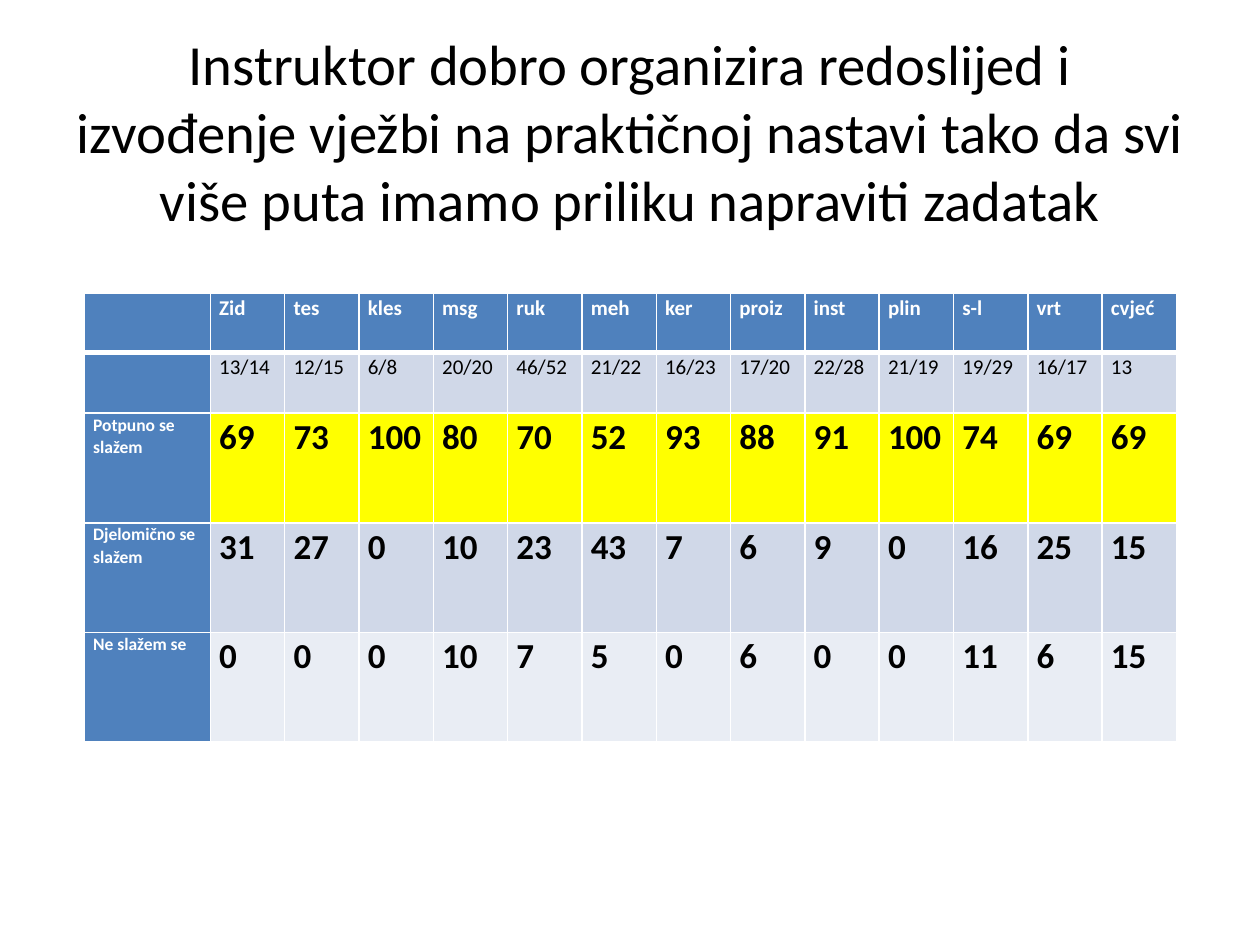
from lxml import etree
from pptx import Presentation
from pptx.dml.color import RGBColor
from pptx.enum import text
from pptx.oxml import ns
from pptx.util import Inches, Pt

BLACK = RGBColor(0x00, 0x00, 0x00)
WHITE = RGBColor(0xFF, 0xFF, 0xFF)
BLUE = RGBColor(0x4F, 0x81, 0xBD)
PALE_BLUE = RGBColor(0xD0, 0xD8, 0xE8)
PALE_GREY = RGBColor(0xE9, 0xED, 0xF4)
YELLOW = RGBColor(0xFF, 0xFF, 0x00)

TITLE = ("Instruktor dobro organizira redoslijed i izvođenje vježbi na praktičnoj "
         "nastavi tako da svi više puta imamo priliku napraviti zadatak")
TRADES = "Zid tes kles msg ruk meh ker proiz inst plin s-l vrt cvjeć".split()
COUNTS = "13/14 12/15 6/8 20/20 46/52 21/22 16/23 17/20 22/28 21/19 19/29 16/17 13".split()
AGREE = [69, 73, 100, 80, 70, 52, 93, 88, 91, 100, 74, 69, 69]
PARTLY = [31, 27, 0, 10, 23, 43, 7, 6, 9, 0, 16, 25, 15]
DISAGREE = [0, 0, 0, 10, 7, 5, 0, 6, 0, 0, 11, 6, 15]

ROWS = [
    ("", TRADES, BLUE, dict(size=12, bold=True, color=WHITE)),
    ("", COUNTS, PALE_BLUE, dict(size=12)),
    ("Potpuno se slažem", AGREE, YELLOW, dict(size=20, bold=True)),
    ("Djelomično se slažem", PARTLY, PALE_BLUE, dict(size=20, bold=True)),
    ("Ne slažem se", DISAGREE, PALE_GREY, dict(size=20, bold=True)),
]
ROW_HEIGHTS = [0.47, 0.48, 0.87, 0.87, 0.87]
LABEL_WIDTH = 1


def write_text(frame, content, size, color=BLACK, bold=False, align=None, spacing=None):
    """Write one formatted paragraph into a text frame."""
    paragraph = frame.paragraphs[0]
    paragraph.alignment = align
    paragraph.line_spacing = spacing
    run = paragraph.add_run()
    run.text = content
    run.font.name = "Calibri"
    run.font.size = Pt(size)
    run.font.bold = bold
    run.font.color.rgb = color


def set_borders(cell, **widths):
    """Draw white cell borders with the given widths in points."""
    properties = cell._tc.get_or_add_tcPr()
    for index, side in enumerate(("lnL", "lnR", "lnT", "lnB")):
        line = etree.Element(ns.qn(f"a:{side}"), w=str(Pt(widths.get(side, 1))))
        fill = etree.SubElement(line, ns.qn("a:solidFill"))
        etree.SubElement(fill, ns.qn("a:srgbClr"), val=str(WHITE))
        properties.insert(index, line)


def add_title(slide, left, top, width, height):
    """Place the centred title in its box."""
    frame = slide.shapes.add_textbox(*map(Inches, (left, top, width, height))).text_frame
    frame.word_wrap = True
    frame.vertical_anchor = text.MSO_ANCHOR.MIDDLE
    write_text(frame, TITLE, size=32.4, align=text.PP_ALIGN.CENTER)


def fill_cell(cell, content, fill, style):
    """Fill one table cell and write its text."""
    cell.margin_left = cell.margin_right = Inches(0.07)
    cell.margin_top = cell.margin_bottom = 0
    cell.fill.solid()
    cell.fill.fore_color.rgb = fill
    write_text(cell.text_frame, content, spacing=1.07, **style)


def add_results(slide, left, top, width, height):
    """Place the table of survey results in its box."""
    box = map(Inches, (left, top, width, height))
    table = slide.shapes.add_table(len(ROWS), len(TRADES) + 1, *box).table
    for index, column in enumerate(table.columns):
        trade_width = (width - LABEL_WIDTH) / len(TRADES)
        column.width = Inches(trade_width if index else LABEL_WIDTH)
    label_style = dict(size=10, bold=True, color=WHITE)
    for row_index, (label, values, fill, style) in enumerate(ROWS):
        table.rows[row_index].height = Inches(ROW_HEIGHTS[row_index])
        edges = {0: {"lnB": 3}, 1: {"lnT": 3}}.get(row_index, {})
        for column_index, value in enumerate([label, *values]):
            cell = table.cell(row_index, column_index)
            if column_index:
                fill_cell(cell, str(value), fill, style)
            else:
                fill_cell(cell, label, BLUE, label_style)
            set_borders(cell, **edges)


def main():
    """Build the slide and save it."""
    presentation = Presentation()
    presentation.slide_width = Inches(10)
    presentation.slide_height = Inches(7.5)
    slide = presentation.slides.add_slide(presentation.slide_layouts[6])
    add_title(slide, 0.5, 0.3, 9, 1.48)
    add_results(slide, 0.67, 2.33, 8.67, sum(ROW_HEIGHTS))
    presentation.save("out.pptx")


if __name__ == "__main__":
    main()
